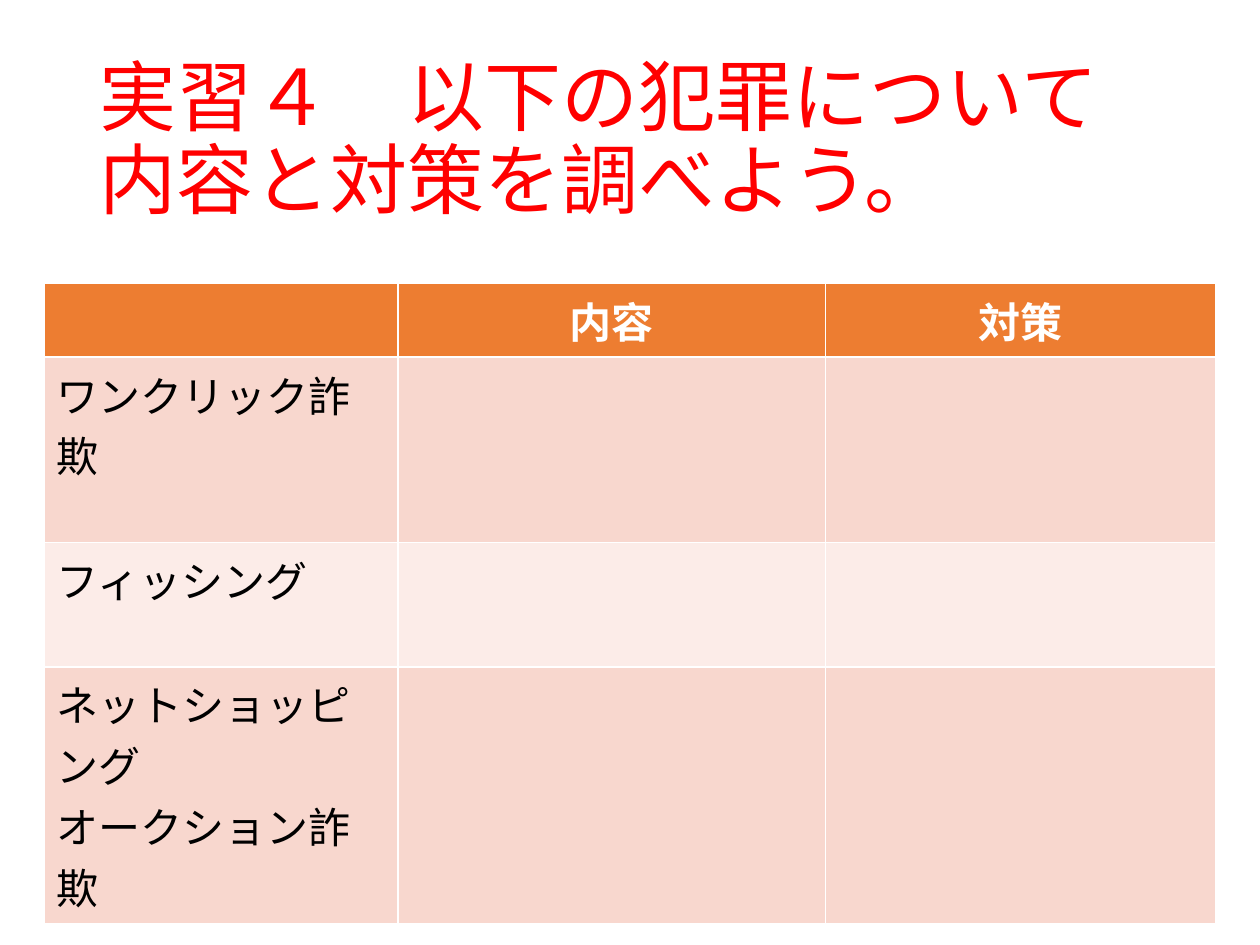
from pptx import Presentation
from pptx.util import Inches, Pt
from pptx.dml.color import RGBColor
from pptx.enum.text import PP_ALIGN as Align, MSO_ANCHOR as Anchor, MSO_AUTO_SIZE as Fit

COLORS = {
    "title": "FF0000",
    "head": "ED7D31",
    "odd": "F8D7CE",
    "even": "FCECE8",
    "white": "FFFFFF",
    "black": "000000",
}
TITLE = {"size": Pt(44), "name": "Calibri", "bold": False}
HEAD = {"size": Pt(24), "name": "Calibri", "bold": True}
BODY = HEAD | {"bold": False}
WIDTHS = [2.81, 3.39, 3.1]
HEIGHTS = [0.58, 1.47, 0.99, 2.03]
ROWS = [
    ["", "内容", "対策"],
    ["ワンクリック詐欺", "", ""],
    ["フィッシング", "", ""],
    ["ネットショッピング\nオークション詐欺", "", ""],
]


def paint(name):
    return RGBColor.from_string(COLORS[name])


def style(font, look, color):
    for key, value in look.items():
        setattr(font, key, value)
    font.color.rgb = paint(color)


def add_title(slide, box, text):
    title = slide.shapes.title
    title.left, title.top, title.width, title.height = map(Inches, box)
    frame = title.text_frame
    frame.text = text
    frame.word_wrap = True
    frame.auto_size = Fit.NONE
    frame.vertical_anchor = Anchor.MIDDLE
    para = frame.paragraphs[0]
    para.alignment = Align.LEFT
    para.line_spacing = 0.9
    style(para.runs[0].font, TITLE, "title")


def fill_cell(cell, text, head, band):
    cell.fill.solid()
    cell.fill.fore_color.rgb = paint(band)
    cell.text = text
    for para in cell.text_frame.paragraphs:
        para.alignment = Align.CENTER if head else Align.LEFT
        style(para.font, HEAD if head else BODY, "white" if head else "black")
        for run in para.runs:
            style(run.font, HEAD if head else BODY, "white" if head else "black")


def add_grid(slide, box):
    frame = slide.shapes.add_table(len(ROWS), len(WIDTHS), *map(Inches, box))
    table = frame.table
    for col, width in zip(table.columns, WIDTHS):
        col.width = Inches(width)
    for row, height in zip(table.rows, HEIGHTS):
        row.height = Inches(height)
    for r, texts in enumerate(ROWS):
        band = "head" if r == 0 else "odd" if r % 2 else "even"
        for c, text in enumerate(texts):
            fill_cell(table.cell(r, c), text, r == 0, band)


def main():
    deck = Presentation()
    deck.slide_width, deck.slide_height = Inches(10), Inches(7.5)
    slide = deck.slides.add_slide(deck.slide_layouts[5])
    add_title(slide, (0.69, 0.4, 8.62, 1.45), "実習４　以下の犯罪について内容と対策を調べよう。")
    add_grid(slide, (0.35, 2.25, sum(WIDTHS), sum(HEIGHTS)))
    deck.save("out.pptx")


if __name__ == "__main__":
    main()
